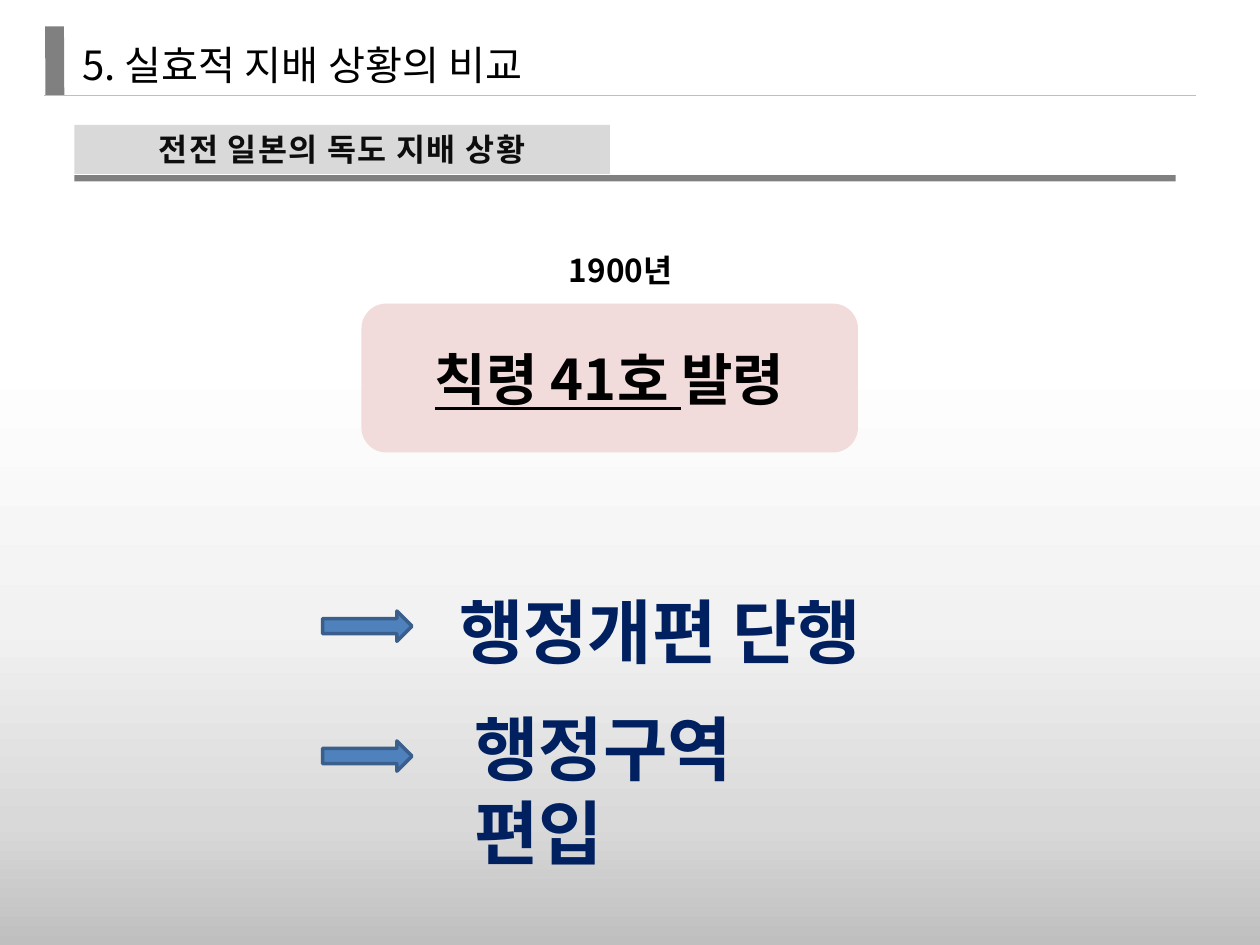
from pptx import Presentation
from pptx.dml.color import RGBColor as Rgb
from pptx.enum.shapes import MSO_CONNECTOR as Link, MSO_SHAPE as Kind
from pptx.enum.text import MSO_ANCHOR as Anchor, MSO_AUTO_SIZE as Fit, PP_ALIGN as Align
from pptx.oxml.ns import qn
from pptx.util import Pt
from lxml.etree import SubElement as Sub

FONT = "Noto Sans CJK KR"
HUES = {
    "bar": "808080", "rule": "BFBFBF", "tab": "D9D9D9", "card": "F2DCDB",
    "blue": "4F81BD", "edge": "3A5F8C", "navy": "002060", "ink": "0D0D0D",
    "black": "000000", "white": "FFFFFF", "mist": "F2F2F2", "pink": "FFEBFA",
}


def add_box(kind, spot, hue):
    box = slide.shapes.add_shape(kind, *map(Pt, spot))
    box.shadow.inherit = False
    box.fill.solid()
    box.fill.fore_color.rgb = Rgb.from_string(HUES[hue])
    box.line.fill.background()
    return box


def add_run(box, text, size, hue, bold=True, line=False, side=Align.CENTER):
    para = box.text_frame.paragraphs[0]
    para.alignment = side
    run = para.add_run()
    run.text = text
    font = run.font
    font.size, font.bold, font.underline, font.name = Pt(size), bold, line, FONT
    font.color.rgb = Rgb.from_string(HUES[hue])
    Sub(run._r.rPr, qn("a:ea"), typeface=FONT)
    return run


deck = Presentation()
deck.slide_width, deck.slide_height = Pt(720), Pt(540)
slide = deck.slides.add_slide(deck.slide_layouts[6])

slide.background.fill.gradient()
fade = slide.element.find(".//" + qn("a:gradFill"))
stops = fade.find(qn("a:gsLst"))
for stop in list(stops):
    stops.remove(stop)
for pos, hue in [(37, "white"), (66, "mist"), (87, "tab"), (100, "rule"), (100, "pink")]:
    stop = Sub(stops, qn("a:gs"), pos=str(pos * 1000))
    Sub(stop, qn("a:srgbClr"), val=HUES[hue])
fade.find(qn("a:lin")).set("ang", "5400000")

mark = add_box(Kind.RECTANGLE, (25.9, 15.1, 10.8, 39.6), "bar")
mark.rotation = 359.7
rule = slide.shapes.add_connector(Link.STRAIGHT, Pt(25.2), Pt(54.7), Pt(683.3), Pt(54.7))
rule.line.color.rgb = Rgb.from_string(HUES["rule"])
rule.line.width = Pt(0.75)
Sub(rule._element.spPr, qn("a:effectLst"))

card = add_box(Kind.ROUNDED_RECTANGLE, (206.6, 173.5, 283.7, 85), "card")
card.text_frame.vertical_anchor = Anchor.MIDDLE
add_run(card, "칙령 41호 ", 32, "black", line=True)
add_run(card, "발령", 32, "black")

for text, spot, size, hue, bold, wrap, side in [
    ("5. 실효적 지배 상황의 비교", (20.2, 19.4, 305.3, 35.3), 23, "black", False, False, Align.CENTER),
    ("1900년", (286.6, 139.7, 136.1, 28.8), 18, "black", True, True, Align.CENTER),
    ("행정개편 단행", (99.4, 332.6, 555.8, 116.6), 40, "navy", True, True, Align.CENTER),
    ("행정구역 편입", (264.2, 399.6, 243.4, 77.8), 40, "navy", True, True, Align.LEFT),
]:
    box = slide.shapes.add_textbox(*map(Pt, spot))
    box.text_frame.word_wrap = wrap
    box.text_frame.auto_size = Fit.SHAPE_TO_FIT_TEXT
    add_run(box, text, size, hue, bold, side=side)

for top in (349.2, 423.4):
    arrow = add_box(Kind.RIGHT_ARROW, (184.3, top, 51.1, 17.3), "blue")
    arrow.line.color.rgb = Rgb.from_string(HUES["edge"])
    arrow.line.width = Pt(2)

tab = add_box(Kind.RECTANGLE, (42.5, 71.3, 306, 28.1), "tab")
tab.text_frame.vertical_anchor = Anchor.MIDDLE
label = add_run(tab, "전전 일본의 독도 지배 상황", 18, "ink")
label._r.rPr.set("spc", "80")
add_box(Kind.RECTANGLE, (42.5, 100.1, 629.3, 3.6), "bar")

deck.save("out.pptx")
